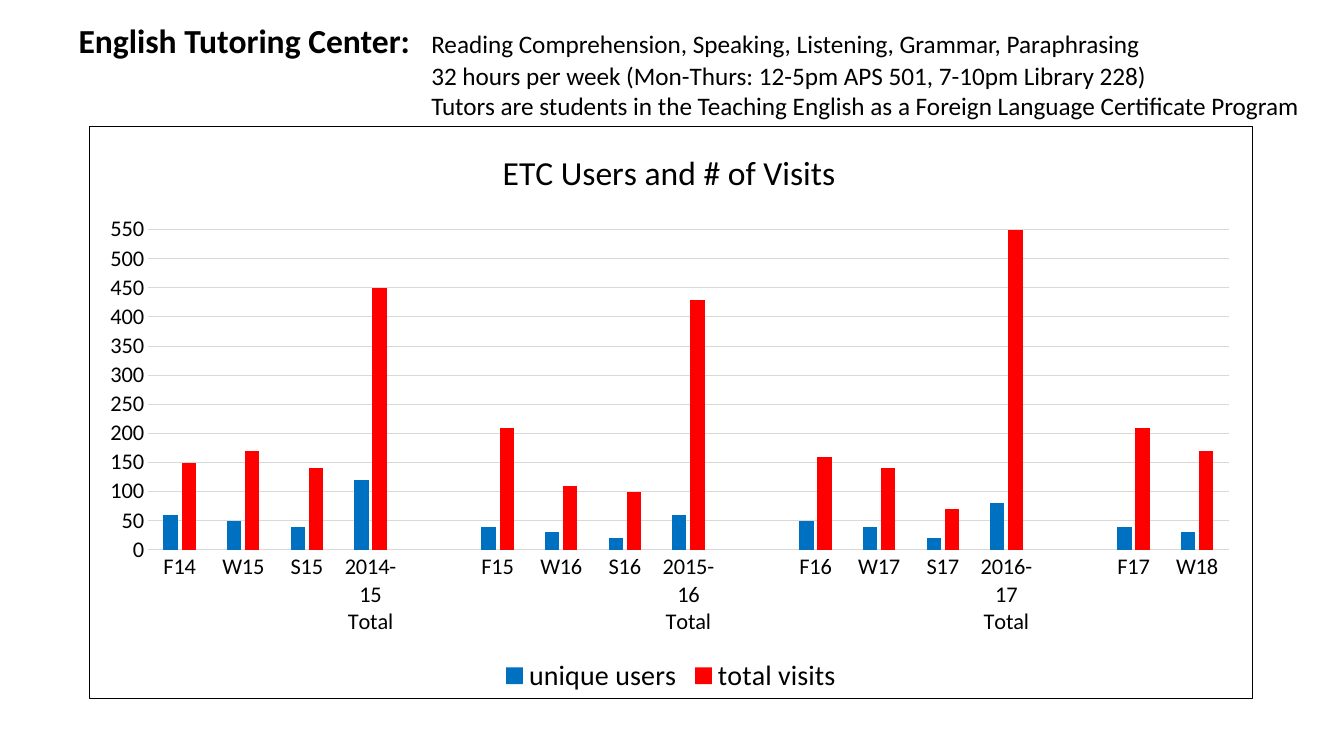
from dataclasses import dataclass

from lxml.etree import _Element as Element
from pptx import Presentation
from pptx.chart.axis import CategoryAxis, ValueAxis
from pptx.chart.chart import Chart
from pptx.chart.data import CategoryChartData
from pptx.dml.color import RGBColor
from pptx.enum.chart import XL_CHART_TYPE as ChartType
from pptx.enum.chart import XL_LEGEND_POSITION as LegendPosition
from pptx.enum.chart import XL_TICK_MARK as TickMark
from pptx.enum.text import MSO_AUTO_SIZE as AutoSize
from pptx.oxml import parse_xml
from pptx.oxml.ns import nsdecls, qn
from pptx.slide import Slide
from pptx.text.text import Font, _Paragraph as Paragraph
from pptx.util import Cm, Pt

TYPEFACE = "Calibri"
BLACK, GRID_GREY = "000000", "D9D9D9"


@dataclass(frozen=True)
class Measure:
    name: str
    color: str
    values: tuple[int | None, ...]


@dataclass(frozen=True)
class Phrase:
    text: str
    size: int = 18
    bold: bool = False


TERMS = (
    "F14", "W15", "S15", "2014-15 Total", "",
    "F15", "W16", "S16", "2015-16 Total", "",
    "F16", "W17", "S17", "2016-17 Total", "",
    "F17", "W18",
)
MEASURES = (
    Measure("unique users", "0070C0", (
        60, 50, 40, 120, None, 40, 30, 20, 60, None,
        50, 40, 20, 80, None, 40, 30)),
    Measure("total visits", "FF0000", (
        150, 170, 140, 450, None, 210, 110, 100, 430, None,
        160, 140, 70, 550, None, 210, 170)),
)
HEADER_LINES = (
    (Phrase("English Tutoring Center:", 24, True),
     Phrase(" \tReading Comprehension, Speaking, Listening, Grammar, Paraphrasing")),
    (Phrase("\t32 hours per week (Mon-Thurs: 12-5pm APS 501, 7-10pm Library 228)"),),
    (Phrase("\tTutors are students in the Teaching English as a Foreign Language "
            "Certificate Program"),),
)


def rgb(color: str) -> RGBColor:
    return RGBColor.from_string(color)


def style_font(font: Font, size: int, bold: bool = False) -> None:
    font.name = TYPEFACE
    font.size = Pt(size)
    font.bold = bold
    font.color.rgb = rgb(BLACK)


def add_phrase(paragraph: Paragraph, phrase: Phrase) -> None:
    run = paragraph.add_run()
    run.text = phrase.text
    style_font(run.font, phrase.size, phrase.bold)


def add_header(slide: Slide) -> None:
    header = slide.shapes.add_textbox(Cm(1.73), Cm(0.37), Cm(32.13), Cm(2.82))
    frame = header.text_frame
    frame.word_wrap = True
    frame.auto_size = AutoSize.SHAPE_TO_FIT_TEXT
    for index, phrases in enumerate(HEADER_LINES):
        paragraph = frame.add_paragraph() if index else frame.paragraphs[0]
        paragraph._p.get_or_add_pPr().append(parse_xml(
            f'<a:tabLst {nsdecls("a")}><a:tab pos="{Cm(8.89)}" algn="l"/></a:tabLst>'))
        for phrase in phrases:
            add_phrase(paragraph, phrase)


def set_layout(owner: Element, index: int, **places: float | str) -> None:
    for old in owner.findall(qn("c:layout")):
        owner.remove(old)
    entries = "".join(f'<c:{key} val="{value}"/>' for key, value in places.items())
    owner.insert(index, parse_xml(
        f'<c:layout {nsdecls("c")}><c:manualLayout>{entries}</c:manualLayout></c:layout>'))


def add_border(chart: Chart) -> None:
    chart._chartSpace.find(qn("c:chart")).addnext(parse_xml(
        f'<c:spPr {nsdecls("c", "a")}><a:noFill/><a:ln w="{Pt(0.75)}"><a:solidFill>'
        f'<a:srgbClr val="{BLACK}"/></a:solidFill></a:ln></c:spPr>'))


def style_axis(axis: CategoryAxis | ValueAxis) -> None:
    axis.major_tick_mark = axis.minor_tick_mark = TickMark.NONE
    style_font(axis.tick_labels.font, 16)


def style_axes(chart: Chart) -> None:
    terms, counts = chart.category_axis, chart.value_axis
    style_axis(terms)
    style_axis(counts)
    counts.minimum_scale, counts.maximum_scale, counts.major_unit = 0, 550, 50
    counts.tick_labels.number_format = "0"
    counts.tick_labels.number_format_is_linked = False
    counts.format.line.fill.background()
    counts.has_major_gridlines = True
    for line in (terms.format.line, counts.major_gridlines.format.line):
        line.color.rgb = rgb(GRID_GREY)
        line.width = Pt(0.75)


def style_title(chart: Chart) -> None:
    chart.has_title = True
    add_phrase(chart.chart_title.text_frame.paragraphs[0],
               Phrase("ETC Users and # of Visits", 24))
    set_layout(chart.chart_title._element, 1, xMode="edge", yMode="edge", x=0.35, y=0.03)


def add_visits_chart(slide: Slide) -> None:
    data = CategoryChartData(number_format="0")
    data.categories = TERMS
    for measure in MEASURES:
        data.add_series(measure.name, measure.values)
    chart = slide.shapes.add_chart(
        ChartType.COLUMN_CLUSTERED, Cm(2.25), Cm(3.18), Cm(29.32), Cm(14.44), data).chart
    style_font(chart.font, 10)
    style_title(chart)
    style_axes(chart)
    chart.has_legend = True
    chart.legend.position = LegendPosition.BOTTOM
    chart.legend.include_in_layout = False
    style_font(chart.legend.font, 20)
    columns = chart.plots[0]
    columns.gap_width, columns.overlap = 219, -27
    columns.vary_by_categories = False
    for series, measure in zip(columns.series, MEASURES):
        series.format.fill.solid()
        series.format.fill.fore_color.rgb = rgb(measure.color)
        series.invert_if_negative = False
    set_layout(chart._chartSpace.chart.plotArea, 0, layoutTarget="inner",
               xMode="edge", yMode="edge", x=0.05, y=0.18, w=0.93, h=0.56)
    add_border(chart)


def main() -> None:
    deck = Presentation()
    deck.slide_width, deck.slide_height = Cm(33.87), Cm(19.05)
    slide = deck.slides.add_slide(deck.slide_layouts[6])
    add_header(slide)
    add_visits_chart(slide)
    deck.save("out.pptx")


if __name__ == "__main__":
    main()
